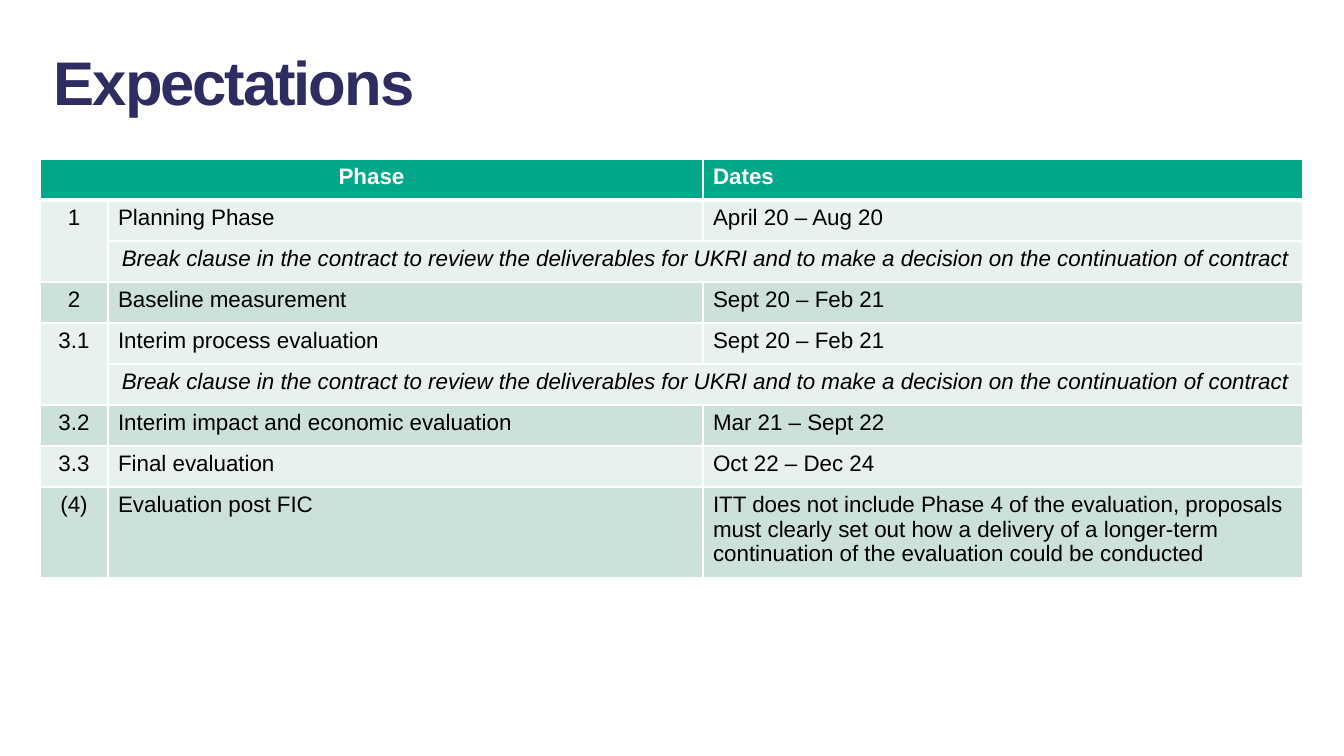
from dataclasses import dataclass

from lxml.etree import SubElement
from pptx import Presentation
from pptx.dml.color import RGBColor
from pptx.enum.text import MSO_ANCHOR as Anchor, PP_ALIGN as Align
from pptx.oxml.ns import qn
from pptx.util import Pt


@dataclass(frozen=True)
class Theme:
    font: str = "Arial"
    title_size: int = 44
    table_size: int = 16
    navy: str = "2E2D62"
    green: str = "00A788"
    light: str = "E7F1ED"
    dark: str = "CBE1DA"
    white: str = "FFFFFF"
    black: str = "000000"


THEME = Theme()
BREAK_CLAUSE = (
    "Break clause in the contract to review the deliverables for UKRI "
    "and to make a decision on the continuation of contract"
)
POST_FIC = (
    "ITT does not include Phase 4 of the evaluation, proposals must clearly "
    "set out how a delivery of a longer-term continuation of the evaluation "
    "could be conducted"
)
# number, phase, dates, followed by a break clause
PHASES = [
    ("1", "Planning Phase", "April 20 – Aug 20", True),
    ("2", "Baseline measurement", "Sept 20 – Feb 21", False),
    ("3.1", "Interim process evaluation", "Sept 20 – Feb 21", True),
    ("3.2", "Interim impact and economic evaluation", "Mar 21 – Sept 22", False),
    ("3.3", "Final evaluation", "Oct 22 – Dec 24", False),
    ("(4)", "Evaluation post FIC", POST_FIC, False),
]
COLUMNS = (68, 595, 600)
ROW_HEIGHT = 41


def px(n):
    """Turn pixels (100.8 to the inch) into EMU."""
    return round(n * 914400 / 100.8)


def add_run(p, text, size, color, bold=False, italic=False):
    r = p.add_run()
    r.text = text
    r.font.name = THEME.font
    r.font.size = Pt(size)
    r.font.bold = bold
    r.font.italic = italic
    r.font.color.rgb = RGBColor.from_string(color)
    return r


def add_title(s, text):
    tf = s.shapes.add_textbox(px(44), px(38), px(1288), px(85)).text_frame
    tf.word_wrap = True
    tf.vertical_anchor = Anchor.BOTTOM
    r = add_run(tf.paragraphs[0], text, THEME.title_size, THEME.navy, bold=True)
    r.font._element.set("spc", "-150")


def set_borders(cell, top=1, bottom=1):
    """Draw white cell borders, with widths in points."""
    props = cell._tc.get_or_add_tcPr()
    widths = {"a:lnL": 1, "a:lnR": 1, "a:lnT": top, "a:lnB": bottom}
    for i, (tag, width) in enumerate(widths.items()):
        line = SubElement(props, qn(tag), w=str(Pt(width)))
        fill = SubElement(line, qn("a:solidFill"))
        SubElement(fill, qn("a:srgbClr"), val=THEME.white)
        props.insert(i, line)


def write_cell(cell, text, centered=False, color=THEME.black, **style):
    p = cell.text_frame.paragraphs[0]
    p.alignment = Align.CENTER if centered else Align.LEFT
    add_run(p, text, THEME.table_size, color, **style)


def style_row(table, row, fill):
    for col in range(len(COLUMNS)):
        cell = table.cell(row, col)
        cell.fill.solid()
        cell.fill.fore_color.rgb = RGBColor.from_string(fill)
        set_borders(cell, top=3 if row == 1 else 1, bottom=3 if row == 0 else 1)


def add_header(table):
    style_row(table, 0, THEME.green)
    table.cell(0, 0).merge(table.cell(0, 1))
    write_cell(table.cell(0, 0), "Phase", True, THEME.white, bold=True)
    write_cell(table.cell(0, 2), "Dates", False, THEME.white, bold=True)


def add_phase(table, row, fill, number, phase, dates, has_break):
    """Fill one phase and return the number of the next free row."""
    style_row(table, row, fill)
    write_cell(table.cell(row, 0), number, centered=True)
    write_cell(table.cell(row, 1), phase)
    write_cell(table.cell(row, 2), dates)
    if not has_break:
        return row + 1
    clause = row + 1
    style_row(table, clause, fill)
    table.cell(row, 0).merge(table.cell(clause, 0))
    table.cell(clause, 1).merge(table.cell(clause, 2))
    write_cell(table.cell(clause, 1), BREAK_CLAUSE, centered=True, italic=True)
    return clause + 1


def add_phase_table(s):
    rows = 1 + len(PHASES) + sum(phase[-1] for phase in PHASES)
    frame = s.shapes.add_table(rows, len(COLUMNS), px(40), px(159),
                               px(sum(COLUMNS)), px(rows * ROW_HEIGHT))
    table = frame.table
    table.horz_banding = False
    for column, width in zip(table.columns, COLUMNS):
        column.width = px(width)
    add_header(table)
    row = 1
    for i, phase in enumerate(PHASES):
        row = add_phase(table, row, THEME.dark if i % 2 else THEME.light, *phase)


def main():
    prs = Presentation()
    prs.slide_width, prs.slide_height = px(1344), px(756)
    s = prs.slides.add_slide(prs.slide_layouts[6])
    add_title(s, "Expectations")
    add_phase_table(s)
    prs.save("out.pptx")


if __name__ == "__main__":
    main()
